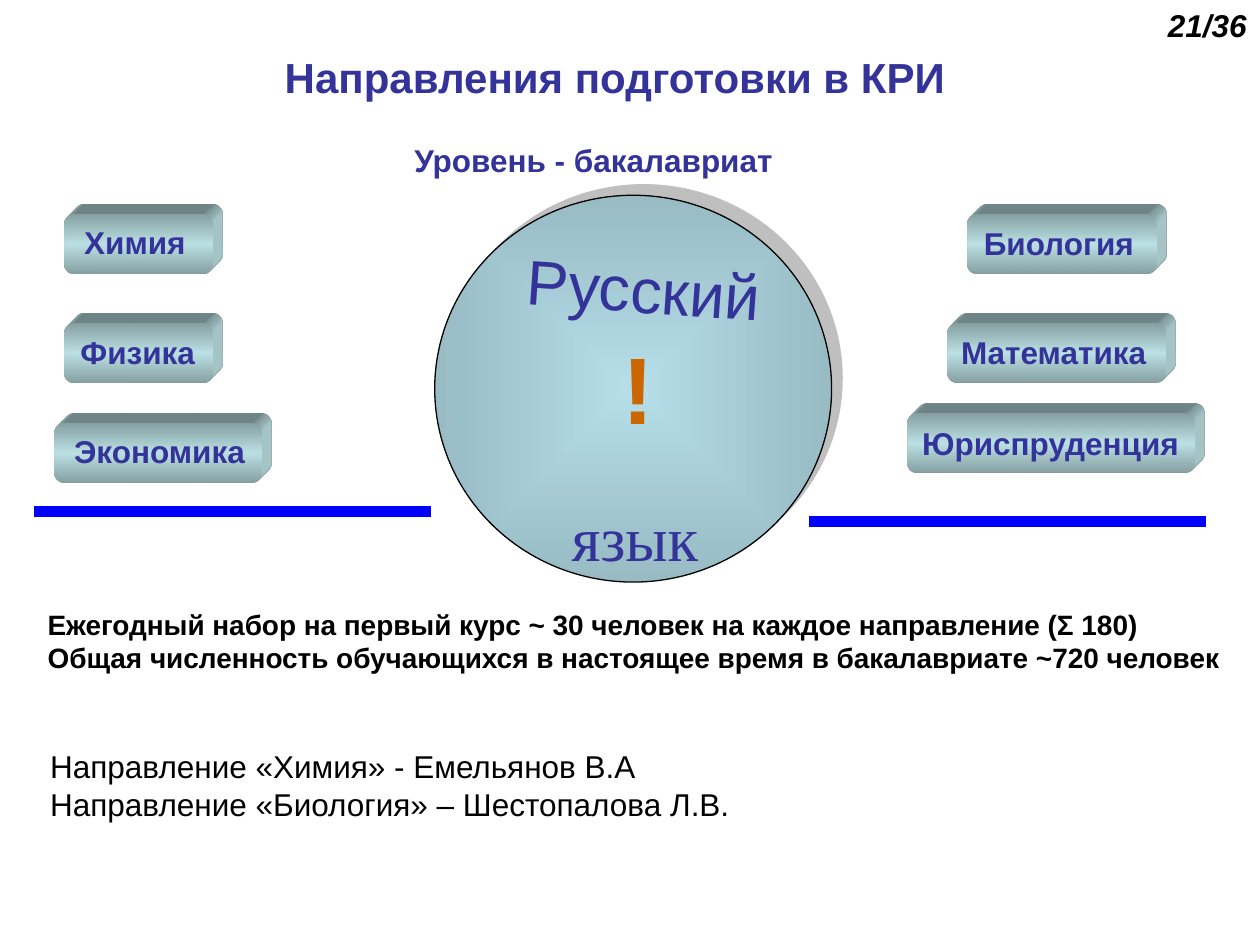
from pptx import Presentation
from pptx.dml.color import RGBColor
from pptx.enum.shapes import MSO_CONNECTOR as CONN, MSO_SHAPE as SHAPE
from pptx.enum.text import MSO_ANCHOR as ANCHOR, MSO_AUTO_SIZE as AUTO, PP_ALIGN as ALIGN
from pptx.oxml import parse_xml
from pptx.oxml.ns import nsdecls
from pptx.util import Inches, Pt

NAVY, BLACK, BLUE, ORANGE = "333399", "000000", "0000FF", "CC6600"
NS = nsdecls("a")

# Left, top, width of the button; left, top, width of its label
SUBJECTS = [
    ("Химия", 0.51, 1.7, 1.18, 0.57, 1.72, 1.08),
    ("Физика", 0.51, 2.57, 1.18, 0.54, 2.59, 1.11),
    ("Экономика", 0.43, 3.36, 1.65, 0.49, 3.38, 1.56),
    ("Биология", 7.68, 1.7, 1.5, 7.71, 1.73, 1.4),
    ("Математика", 7.52, 2.57, 1.73, 7.53, 2.59, 1.68),
    ("Юриспруденция", 7.2, 3.28, 2.28, 7.22, 3.32, 2.25),
]


def rgb(value):
    return RGBColor.from_string(value)


def place(sp, x, y, w, h):
    sp.left, sp.top, sp.width, sp.height = map(Inches, (x, y, w, h))


def write(sp, lines, size, color, bold=False, italic=False, font="Arial", align=ALIGN.LEFT):
    tf = sp.text_frame
    tf.word_wrap = False
    tf.auto_size = AUTO.NONE
    tf.vertical_anchor = ANCHOR.TOP
    for i, line in enumerate(lines):
        p = tf.paragraphs[0] if i == 0 else tf.add_paragraph()
        p.alignment = align
        r = p.add_run()
        r.text = line
        f = r.font
        f.name, f.size, f.bold, f.italic = font, Pt(size), bold, italic
        f.color.rgb = rgb(color)


def add_text(slide, lines, x, y, w, h, size, color, **style):
    sp = slide.shapes.add_textbox(*map(Inches, (x, y, w, h)))
    write(sp, lines, size, color, **style)
    return sp


def add_gradient_shape(slide, kind, x, y, w, h, stops, direction):
    sp = slide.shapes.add_shape(kind, *map(Inches, (x, y, w, h)))
    gs = "".join(f'<a:gs pos="{pos * 1000}"><a:srgbClr val="{c}"/></a:gs>' for pos, c in stops)
    sp._element.spPr.append(parse_xml(
        f'<a:gradFill {NS} rotWithShape="1"><a:gsLst>{gs}</a:gsLst>{direction}</a:gradFill>'))
    sp.shadow.inherit = False
    return sp


def add_subject(slide, name, x, y, w, text_x, text_y, text_w):
    stops = [(0, "86A0A2"), (50, "BBE0E3"), (100, "86A0A2")]
    sp = add_gradient_shape(slide, SHAPE.ROUNDED_RECTANGLE, x, y, w, 0.47, stops,
                            '<a:lin ang="5400000" scaled="1"/>')
    sp.line.fill.background()
    # Oblique extrusion towards the top right
    spPr = sp._element.spPr
    spPr.append(parse_xml(
        f'<a:scene3d {NS}><a:camera prst="legacyObliqueTopRight"/>'
        '<a:lightRig rig="legacyFlat3" dir="b"/></a:scene3d>'))
    spPr.append(parse_xml(
        f'<a:sp3d {NS} extrusionH="201600" prstMaterial="legacyMatte">'
        '<a:bevelT w="13500" h="13500" prst="angle"/><a:bevelB w="13500" h="13500" prst="angle"/>'
        '<a:extrusionClr><a:srgbClr val="BBE0E3"/></a:extrusionClr></a:sp3d>'))
    add_text(slide, [name], text_x, text_y, text_w, 0.4, 18, NAVY, bold=True)


def add_rule(slide, x, y, length):
    line = slide.shapes.add_connector(CONN.STRAIGHT, *map(Inches, (x, y, x + length, y)))
    line.line.color.rgb = rgb(BLUE)
    line.line.width = Pt(6)
    line._element.spPr.append(parse_xml(f"<a:effectLst {NS}/>"))


def add_language_circle(slide):
    sp = add_gradient_shape(slide, SHAPE.OVAL, 3.45, 1.55, 3.15, 3.07,
                            [(0, "B5DEE9"), (100, "98BBC4")],
                            '<a:path path="shape"><a:fillToRect l="50000" t="50000" '
                            'r="50000" b="50000"/></a:path>')
    sp.line.color.rgb = rgb(BLACK)
    sp.line.width = Pt(0.75)
    effects = sp._element.spPr.find("{*}effectLst")
    effects.append(parse_xml(
        f'<a:outerShdw {NS} dist="{Pt(8.5)}" dir="18900000" algn="ctr" rotWithShape="0">'
        '<a:srgbClr val="808080"><a:alpha val="50000"/></a:srgbClr></a:outerShdw>'))
    word = add_text(slide, ["Русский "], 4.1, 1.94, 2.08, 1.78, 36, NAVY, align=ALIGN.CENTER)
    word.rotation = 4
    add_text(slide, ["язык"], 4.29, 3.91, 1.5, 0.57, 36, NAVY,
             font="Times New Roman", align=ALIGN.CENTER)
    add_text(slide, ["!"], 4.84, 2.57, 0.45, 1, 54, ORANGE, bold=True)


def main():
    prs = Presentation()
    prs.slide_width, prs.slide_height = Inches(10), Inches(7.5)
    slide = prs.slides.add_slide(prs.slide_layouts[5])

    # Headings and page number
    title = slide.shapes.title
    place(title, 2.16, 0.36, 5.47, 0.5)
    write(title, ["Направления подготовки в КРИ"], 24, NAVY, bold=True)
    add_text(slide, ["Уровень - бакалавриат"], 3.19, 1.07, 3.06, 0.4, 18, NAVY, bold=True)
    add_text(slide, ["21/36"], 9.17, 0, 0.83, 0.4, 18, BLACK, bold=True, italic=True)

    # Subjects around the common language
    for subject in SUBJECTS:
        add_subject(slide, *subject)
    add_rule(slide, 6.42, 4.14, 3.15)
    add_rule(slide, 0.27, 4.06, 3.15)
    add_language_circle(slide)

    # Enrolment figures and people in charge
    add_text(slide, ["Ежегодный набор на первый курс ~ 30 человек на каждое направление (Σ 180)",
                     "Общая численность обучающихся в настоящее время в бакалавриате ~720 человек"],
             0.28, 4.77, 9.62, 0.64, 16, BLACK, bold=True)
    add_text(slide, ["Направление «Химия» - Емельянов В.А",
                     "Направление «Биология» – Шестопалова Л.В."],
             0.3, 5.88, 5.65, 0.71, 18, BLACK)

    prs.save("out.pptx")


if __name__ == "__main__":
    main()
